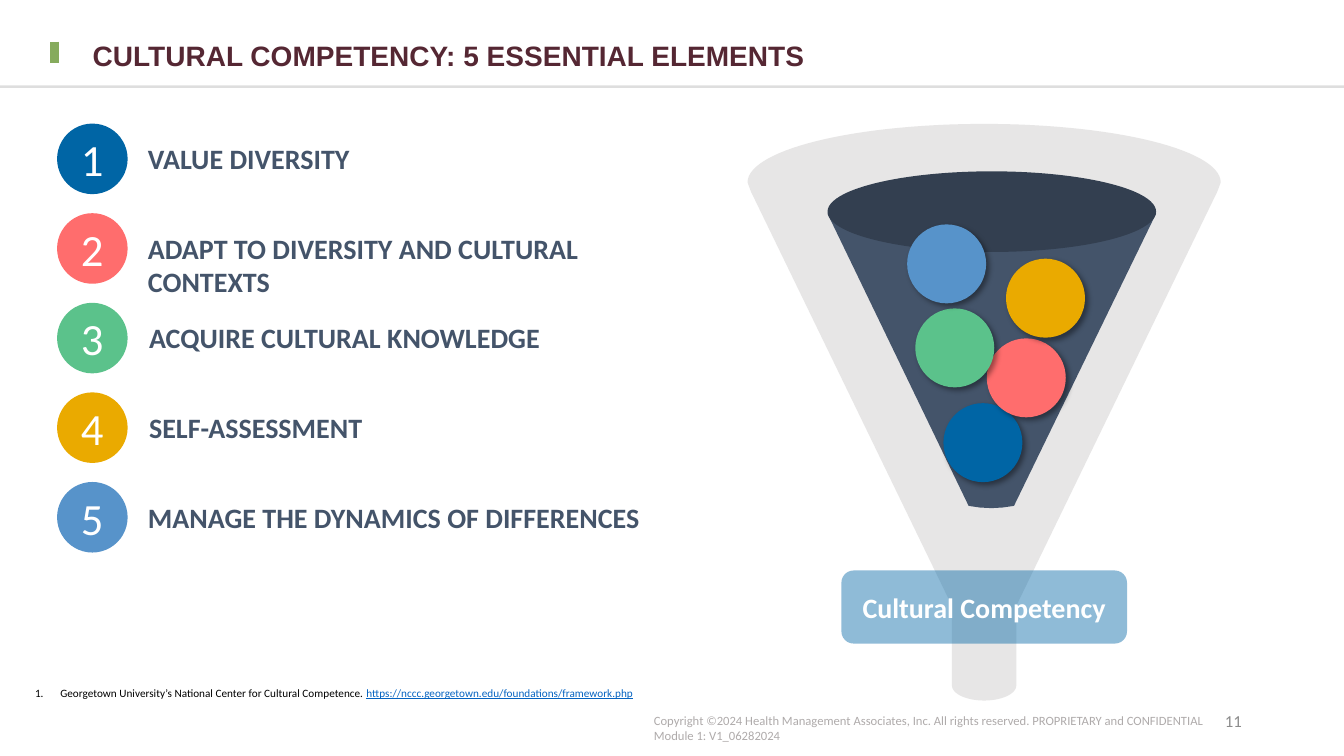
import math
from lxml import etree
from pptx import Presentation
from pptx import util as u
from pptx.dml.color import RGBColor
from pptx.enum import shapes, text
from pptx.oxml import parse_xml
from pptx.oxml.ns import nsdecls, qn

Pt = u.Pt
ALIGN, ANCHOR, SHAPE = text.PP_ALIGN, text.MSO_ANCHOR, shapes.MSO_SHAPE


def rgb(value):
    return RGBColor.from_string(value)


def write(shape, words, size, color, bold=False, align=ALIGN.LEFT,
          anchor=ANCHOR.TOP, font="Calibri"):
    frame = shape.text_frame
    frame.word_wrap = True
    frame.vertical_anchor = anchor
    frame.text = words
    for para in frame.paragraphs:
        para.alignment = align
        for span in para.runs:
            span.font.name, span.font.size = font, Pt(size)
            span.font.bold = bold
            span.font.color.rgb = rgb(color)
    return frame


deck = Presentation()
deck.slide_width, deck.slide_height = Pt(960), Pt(540)
page = deck.slides.add_slide(deck.slide_layouts[5])
items = page.shapes
filled = []  # pairs of shape and fill colour

# Copyright footer
footer = items.add_textbox(Pt(460), Pt(505.5), Pt(413.3), Pt(29))
write(footer, "Copyright ©2024 Health Management Associates, Inc. All rights reserved. "
      "PROPRIETARY and CONFIDENTIAL\nModule 1: V1_06282024", 9, "AFABAB")

# Header rule and green accent
for x1, y1, x2, y2, color, width in ((0, 61.9, 960, 61.9, "000000", 1.75),
                                     (38.9, 29.8, 38.9, 45.1, "86AB5D", 7)):
    rule = items.add_connector(shapes.MSO_CONNECTOR.STRAIGHT, Pt(x1), Pt(y1), Pt(x2), Pt(y2))
    rule.line.color.rgb, rule.line.width = rgb(color), Pt(width)
    etree.SubElement(rule._element.spPr, qn("a:effectLst"))
    if color == "000000":
        tint = rule._element.spPr.find(".//" + qn("a:srgbClr"))
        etree.SubElement(tint, qn("a:alpha"), val="12000")

# Funnel: rounded rim, sloping sides, rounded spout
center = 703
rim = [(center + 169 * math.cos(math.radians(a)), 130.3 + 41.8 * math.sin(math.radians(a)))
       for a in range(180, 361, 3)]
spout = [(center + 23 * math.cos(math.radians(a)), 489.6 + 10.8 * math.sin(math.radians(a)))
         for a in range(0, 181, 6)]
outer = rim + [(869.6, 136.8), (726, 432.7)] + spout + [(680, 432.7), (536.4, 136.8)]
inner = [(591.1, 152.6), (825.8, 152.6), (724.3, 361.4), (716, 362.6), (708.4, 363),
         (700, 362.6), (691.9, 361.4)]
for outline, color in ((outer, "E7E6E6"), (inner, "44546A")):
    builder = items.build_freeform(round(outline[0][0] * 100), round(outline[0][1] * 100),
                                   scale=Pt(1) / 100)
    builder.add_line_segments([(round(x * 100), round(y * 100)) for x, y in outline[1:]])
    filled.append((builder.convert_to_shape(), color))
opening = items.add_shape(SHAPE.OVAL, Pt(591.1), Pt(122.4), Pt(234.7), Pt(57.6))
filled.append((opening, "333F50"))

# Title
title = items.title
title.left, title.top, title.width, title.height = Pt(66.2), Pt(30.2), Pt(828), Pt(21.6)
frame = write(title, "CULTURAL COMPETENCY: 5 ESSENTIAL ELEMENTS", 20, "552733", True,
              anchor=ANCHOR.MIDDLE, font="Arial")
frame.margin_left = frame.margin_right = frame.margin_top = frame.margin_bottom = 0
frame.paragraphs[0].line_spacing = 0.9

# Five numbered elements: label, label left, label width, colour, ball left, ball top
elements = [
    ("VALUE DIVERSITY", 98.6, 262, "0065A5", 673.9, 288),
    ("ADAPT TO DIVERSITY AND CULTURAL CONTEXTS", 98.6, 411, "FF6D6D", 704.9, 241.7),
    ("ACQUIRE CULTURAL KNOWLEDGE", 99.4, 313, "5BC28B", 653.8, 220.3),
    ("SELF-ASSESSMENT", 99.4, 313, "EAAA00", 718.6, 184.8),
    ("MANAGE THE DYNAMICS OF DIFFERENCES", 98.6, 397.4, "5793CA", 648, 160.3),
]
for index, (label, left, width, color, _, _) in enumerate(elements):
    step = 64 * index
    badge = items.add_shape(SHAPE.OVAL, Pt(40.8), Pt(88.3 + step), Pt(50.4), Pt(50.4))
    frame = write(badge, str(index + 1), 31.9, "FFFFFF", align=ALIGN.CENTER,
                  anchor=ANCHOR.MIDDLE)
    frame.margin_left = frame.margin_right = frame.margin_top = frame.margin_bottom = Pt(4.3)
    filled.append((badge, color))
    box = items.add_textbox(Pt(left), Pt(97.6 + step), Pt(width), Pt(31.5))
    write(box, label, 20, "44546A", True)

# Balls inside the funnel
balls = []
for _, _, _, color, left, top in elements:
    ball = items.add_shape(SHAPE.OVAL, Pt(left), Pt(top), Pt(56.4), Pt(56.4))
    balls.append(ball)
    filled.append((ball, color))

# Source note
note = items.add_textbox(Pt(18), Pt(474.5), Pt(828), Pt(28.8))
frame = note.text_frame
frame.word_wrap, frame.vertical_anchor = True, ANCHOR.BOTTOM
para = frame.paragraphs[0]
para.line_spacing = 1.2
props = para._p.get_or_add_pPr()
props.set("marL", str(Pt(18)))
props.set("indent", str(-Pt(18)))
etree.SubElement(props, qn("a:buFont"), typeface="+mj-lt")
etree.SubElement(props, qn("a:buAutoNum"), type="arabicPeriod")
for words, color, underline in (
        ("Georgetown University’s National Center for Cultural Competence. ", "000000", False),
        ("https://nccc.georgetown.edu/foundations/framework.php", "0563C1", True)):
    span = para.add_run()
    span.text = words
    span.font.name, span.font.size = "Calibri", Pt(8)
    span.font.color.rgb, span.font.underline = rgb(color), underline

# Outcome label
outcome = items.add_shape(SHAPE.FLOWCHART_ALTERNATE_PROCESS,
                          Pt(601), Pt(407.5), Pt(204), Pt(52.2))
write(outcome, "Cultural Competency", 20, "FFFFFF", True, ALIGN.CENTER, ANCHOR.MIDDLE)
filled.append((outcome, "0065A5"))

# Page number
number = items.add_textbox(Pt(678.2), Pt(500.4), Pt(216), Pt(28.8))
write(number, "11", 12, "8C8C8C", align=ALIGN.RIGHT, anchor=ANCHOR.MIDDLE)

# Fills, transparency and ball shadows
for shape, color in filled:
    shape.fill.solid()
    shape.fill.fore_color.rgb = rgb(color)
    shape.line.fill.background()
    shape.shadow.inherit = False
tint = outcome._element.spPr.find(".//" + qn("a:srgbClr"))
etree.SubElement(tint, qn("a:alpha"), val="44000")
for ball in balls:
    ball._element.spPr.find(qn("a:effectLst")).append(parse_xml(
        f'<a:outerShdw {nsdecls("a")} blurRad="{Pt(4)}" dist="{Pt(3)}" dir="2700000" '
        'algn="tl" rotWithShape="0"><a:srgbClr val="000000"><a:alpha val="40000"/>'
        '</a:srgbClr></a:outerShdw>'))

deck.save("out.pptx")
